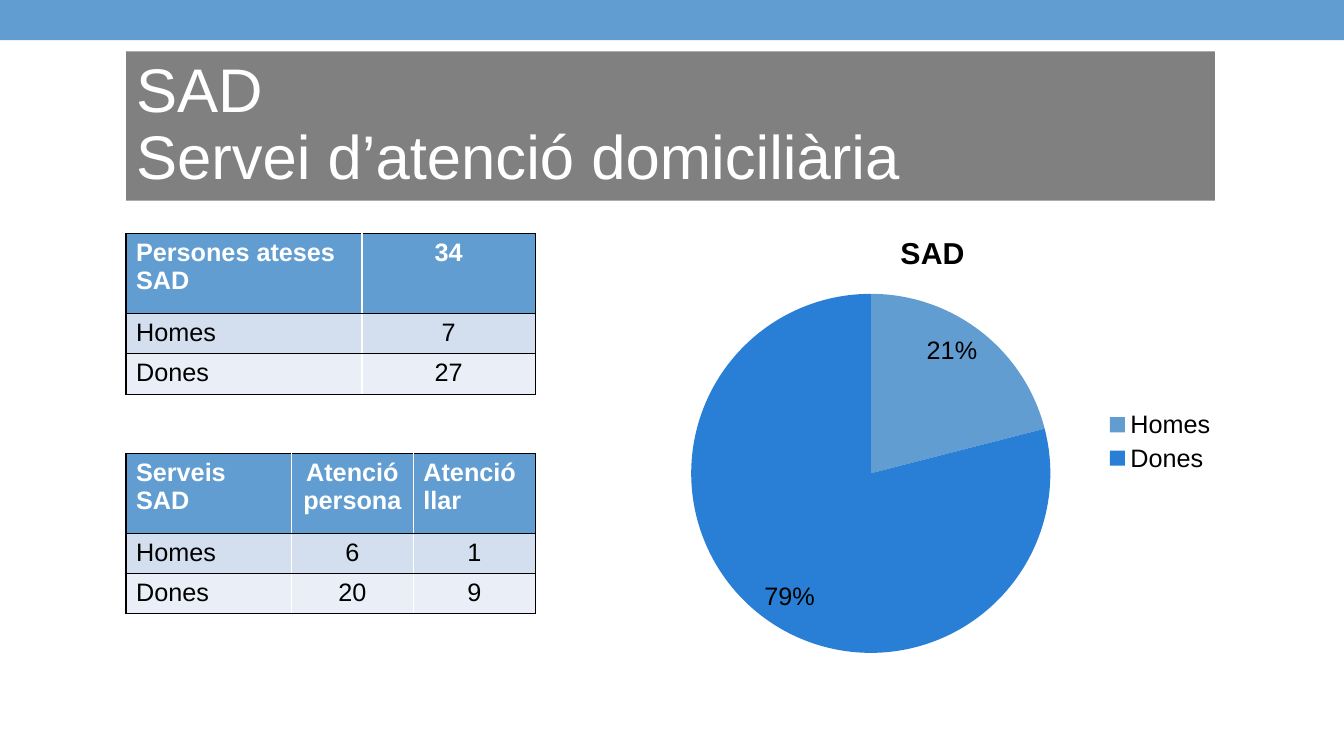
import pptx
import pptx.util
import pptx.dml.color
import pptx.chart.data
import pptx.enum.chart
import pptx.enum.shapes
import pptx.enum.text
import pptx.oxml
from lxml import etree

Inches, Pt = pptx.util.Inches, pptx.util.Pt
ALIGN = pptx.enum.text.PP_ALIGN

FONT = "Arial"
BLUE, GREY, WHITE, BLACK = "629DD1", "808080", "FFFFFF", "000000"
ROW_FILLS = [BLUE, "D3DFEE", "EAEFF7"]
ROW_HEIGHTS = [0.79, 0.4, 0.4]
LEFT = 1.25

TITLE = ["SAD", "Servei d’atenció domiciliària"]
TABLES = [
    {"top": 2.32, "widths": [2.34, 1.72], "left_headers": [0],
     "rows": [["Persones ateses SAD", "34"], ["Homes", "7"], ["Dones", "27"]]},
    {"top": 4.5, "widths": [1.64, 1.21, 1.21], "left_headers": [0, 2],
     "rows": [["Serveis SAD", "Atenció persona", "Atenció llar"],
              ["Homes", "6", "1"], ["Dones", "20", "9"]]},
]
CHART_TITLE = "SAD"
SLICES = [("Homes", 21, BLUE), ("Dones", 79, "297FD5")]
PLOT_LAYOUT = {"x": 0.09, "y": 0.17, "w": 0.61, "h": 0.8}


def rgb(color):
    return pptx.dml.color.RGBColor.from_string(color)


def fill(obj, color):
    obj.fill.solid()
    obj.fill.fore_color.rgb = rgb(color)


def style(font, size, color, bold=False):
    font.name, font.size, font.bold = FONT, Pt(size), bold
    font.color.rgb = rgb(color)


def add_borders(cell, colors):
    tcPr = cell._tc.get_or_add_tcPr()
    for side, color in colors.items():
        tcPr.append(pptx.oxml.parse_xml(
            '<a:ln%s xmlns:a="http://schemas.openxmlformats.org/drawingml/2006/main" '
            'w="12700"><a:solidFill><a:srgbClr val="%s"/></a:solidFill></a:ln%s>'
            % (side, color, side)))


def add_table(slide, top, widths, left_headers, rows):
    table = slide.shapes.add_table(
        len(rows), len(widths), Inches(LEFT), Inches(top),
        Inches(sum(widths)), Inches(sum(ROW_HEIGHTS))).table
    for col, width in zip(table.columns, widths):
        col.width = Inches(width)
    last = len(widths) - 1
    for i, row in enumerate(rows):
        table.rows[i].height = Inches(ROW_HEIGHTS[i])
        for j, text in enumerate(row):
            cell = table.cell(i, j)
            add_borders(cell, {"L": BLACK if j == 0 else WHITE,
                               "R": BLACK if j == last else WHITE,
                               "T": BLACK, "B": BLACK})
            fill(cell, ROW_FILLS[i])
            p = cell.text_frame.paragraphs[0]
            is_left = j == 0 or (i == 0 and j in left_headers)
            p.alignment = ALIGN.LEFT if is_left else ALIGN.CENTER
            r = p.add_run()
            r.text = text
            style(r.font, 18, WHITE if i == 0 else BLACK, bold=i == 0)


def add_pie(slide):
    data = pptx.chart.data.CategoryChartData()
    data.categories = [name for name, _, _ in SLICES]
    data.add_series("Series 1", [value for _, value, _ in SLICES])
    chart = slide.shapes.add_chart(
        pptx.enum.chart.XL_CHART_TYPE.PIE, Inches(6.33), Inches(2.12),
        Inches(5.84), Inches(4.52), data).chart
    style(chart.font, 18, BLACK)

    chart.has_title = True
    r = chart.chart_title.text_frame.paragraphs[0].add_run()
    r.text = CHART_TITLE
    style(r.font, 21.6, BLACK, bold=True)

    chart.has_legend = True
    chart.legend.position = pptx.enum.chart.XL_LEGEND_POSITION.RIGHT
    chart.legend.include_in_layout = False
    style(chart.legend.font, 18, BLACK)

    plot = chart.plots[0]
    plot.vary_by_categories = True
    for i, (_, _, color) in enumerate(SLICES):
        fill(plot.series[0].points[i].format, color)
    plot.has_data_labels = True
    labels = plot.data_labels
    labels.show_percentage, labels.show_value = True, False
    labels.number_format, labels.number_format_is_linked = "0%", False
    labels.position = pptx.enum.chart.XL_LABEL_POSITION.INSIDE_END
    style(labels.font, 18, BLACK)

    # Fixed plot area
    ns = "http://schemas.openxmlformats.org/drawingml/2006/chart"
    area = chart._chartSpace.chart.plotArea
    for old in area.findall("{%s}layout" % ns):
        area.remove(old)
    layout = etree.Element("{%s}layout" % ns)
    manual = etree.SubElement(layout, "{%s}manualLayout" % ns)
    settings = {"layoutTarget": "inner", "xMode": "edge", "yMode": "edge", **PLOT_LAYOUT}
    for tag, value in settings.items():
        etree.SubElement(manual, "{%s}%s" % (ns, tag), val=str(value))
    area.insert(0, layout)


prs = pptx.Presentation()
prs.slide_width, prs.slide_height = Inches(13.33), Inches(7.5)
slide = prs.slides.add_slide(prs.slide_layouts[5])

# Top band
band = slide.shapes.add_shape(pptx.enum.shapes.MSO_SHAPE.RECTANGLE,
                              0, 0, prs.slide_width, Inches(0.4))
band.shadow.inherit = False
fill(band, BLUE)
band.line.fill.background()

# Title
title = slide.shapes.title
title.left, title.top = Inches(LEFT), Inches(0.51)
title.width, title.height = Inches(10.8), Inches(1.48)
fill(title, GREY)
tf = title.text_frame
tf.word_wrap = True
tf.auto_size = pptx.enum.text.MSO_AUTO_SIZE.NONE
tf.vertical_anchor = pptx.enum.text.MSO_ANCHOR.MIDDLE
for i, line in enumerate(TITLE):
    p = tf.add_paragraph() if i else tf.paragraphs[0]
    p.alignment, p.line_spacing = ALIGN.LEFT, 0.9
    p.space_before = Pt(0)
    r = p.add_run()
    r.text = line
    style(r.font, 44, WHITE)

# Tables and chart
for spec_table in TABLES:
    add_table(slide, **spec_table)
add_pie(slide)

prs.save("out.pptx")
